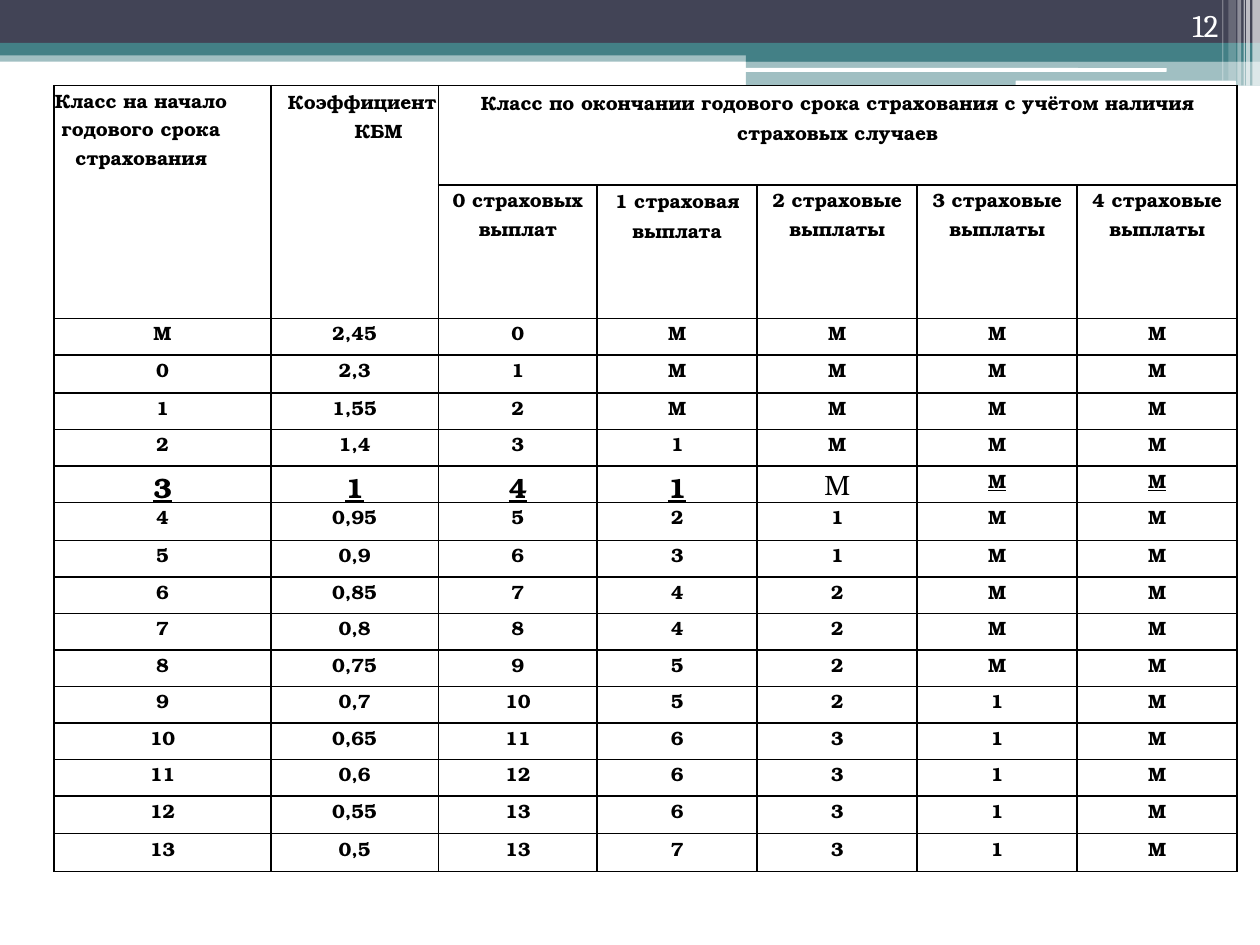
from typing import NamedTuple

from lxml.etree import SubElement
from pptx import Presentation
from pptx.dml.color import RGBColor
from pptx.enum.shapes import MSO_SHAPE
from pptx.enum.text import MSO_ANCHOR, PP_ALIGN
from pptx.oxml.ns import qn
from pptx.util import Inches, Pt

WHITE = RGBColor(0xFF, 0xFF, 0xFF)
BLACK = RGBColor(0, 0, 0)
NAVY = RGBColor(0x42, 0x44, 0x56)
TEAL = RGBColor(0x43, 0x80, 0x86)
SERIF = "TeX Gyre Bonum"
COLS = [1.72, 1.33, 1.26] + [1.27] * 4
ROWS = [0.79, 1.06, 0.29, 0.3] + [0.29] * 3 + [0.3] + [0.29] * 7 + [0.3] * 2
LEFTS = [0.64, 0.38] + [0.46] * 4 + [0.43]
BASE = {"name": SERIF, "size": Pt(11), "bold": True, "underline": False}
BIG = BASE | {"size": Pt(16), "underline": True}
PLAIN = BIG | {"bold": False, "underline": False}
LINED = BASE | {"underline": True}
MARKED = [BIG] * 4 + [PLAIN] + [LINED] * 2
MARK_ROW = 6
DATA = """М 2,45 0 М М М М
0 2,3 1 М М М М
1 1,55 2 М М М М
2 1,4 3 1 М М М
3 1 4 1 М М М
4 0,95 5 2 1 М М
5 0,9 6 3 1 М М
6 0,85 7 4 2 М М
7 0,8 8 4 2 М М
8 0,75 9 5 2 М М
9 0,7 10 5 2 1 М
10 0,65 11 6 3 1 М
11 0,6 12 6 3 1 М
12 0,55 13 6 3 1 М
13 0,5 13 7 3 1 М"""


class Bar(NamedTuple):
    """One flat bar of the top band."""
    left: float
    top: float
    width: float
    height: float
    color: RGBColor
    alpha: int = 100
    kind: MSO_SHAPE = MSO_SHAPE.RECTANGLE


class Head(NamedTuple):
    """One heading cell with its merge span and paragraph layout."""
    row: int
    col: int
    text: str
    space: float
    span: tuple[int, int] = (1, 1)
    left: float = 0
    indent: float = -1.08
    right: float = 0


ROUND = MSO_SHAPE.ROUNDED_RECTANGLE
BARS = [
    Bar(0, 0.4, 10, 0.09, TEAL, 50),
    Bar(0, 0, 10, 0.34, NAVY),
    Bar(0, 0.34, 10, 0.1, TEAL),
    Bar(5.92, 0.39, 4.08, 0.1, TEAL),
    Bar(5.92, 0.48, 4.08, 0.2, TEAL, 50),
    Bar(5.91, 0.54, 3.35, 0.03, WHITE, kind=ROUND),
    Bar(8.06, 0.64, 1.75, 0.04, WHITE, kind=ROUND),
    Bar(9.94, 0, 0.06, 0.68, WHITE, 65),
    Bar(9.89, 0, 0.03, 0.68, WHITE, 65),
    Bar(9.87, 0, 0.01, 0.68, WHITE, 60),
    Bar(9.82, 0, 0.03, 0.68, WHITE, 40),
    Bar(9.75, 0, 0.06, 0.64, WHITE, 20),
    Bar(9.7, 0, 0.01, 0.64, WHITE, 30),
]
HEADS = [
    Head(0, 0, "Класс на начало годового срока страхования", 16.3, (2, 1), right=0.34),
    Head(0, 1, "Коэффициент КБМ", 16.8, (2, 1), 0.38, -0.26),
    Head(0, 2, "Класс по окончании годового срока страхования с учётом наличия "
         "страховых случаев", 17.5, (1, 5)),
    Head(1, 2, "0 страховых выплат", 16.3),
    Head(1, 3, "1 страховая выплата", 16.8),
] + [Head(1, n + 2, f"{n} страховые выплаты", 16.3) for n in (2, 3, 4)]


def style(font, form: dict, color: RGBColor) -> None:
    """Apply format values and a colour to a font."""
    for key, value in form.items():
        setattr(font, key, value)
    font.color.rgb = color


def draw_bar(slide, bar: Bar) -> None:
    """Draw one bar."""
    shape = slide.shapes.add_shape(bar.kind, *map(Inches, bar[:4]))
    shape.shadow.inherit = False
    shape.fill.solid()
    shape.fill.fore_color.rgb = bar.color
    shape.line.fill.background()
    if bar.alpha < 100:
        tint = shape.fill._xPr.find(qn("a:solidFill"))[0]
        SubElement(tint, qn("a:alpha"), val=str(bar.alpha * 1000))


def draw_page(slide) -> None:
    """Draw the page number."""
    frame = slide.shapes.add_textbox(*map(Inches, (8.94, 0, 0.83, 0.4))).text_frame
    frame.word_wrap = True
    frame.vertical_anchor = MSO_ANCHOR.BOTTOM
    para = frame.paragraphs[0]
    para.alignment = PP_ALIGN.RIGHT
    run = para.add_run()
    run.text = "12"
    style(run.font, {"name": "Cambria", "size": Pt(18)}, WHITE)


def dress(cell) -> None:
    """Give a cell its borders, white fill and zero margins."""
    for side in ("left", "right", "top", "bottom"):
        setattr(cell, f"margin_{side}", 0)
    props = cell._tc.get_or_add_tcPr()
    for tag in ("a:lnL", "a:lnR", "a:lnT", "a:lnB"):
        line = SubElement(props, qn(tag), w=str(Pt(1)))
        fill = SubElement(line, qn("a:solidFill"))
        SubElement(fill, qn("a:srgbClr"), val=str(BLACK))
    cell.fill.solid()
    cell.fill.fore_color.rgb = WHITE


def write(cell, text: str, form: dict, left: float, indent: float = -1.08):
    """Write centred text in a cell and return its paragraph."""
    para = cell.text_frame.paragraphs[0]
    para.alignment = PP_ALIGN.CENTER
    props = para._p.get_or_add_pPr()
    props.set("marL", str(Inches(left)))
    props.set("indent", str(Inches(indent)))
    run = para.add_run()
    run.text = text
    style(run.font, form, BLACK)
    return para


def draw_head(table, head: Head) -> None:
    """Write one heading and merge its span."""
    cell = table.cell(head.row, head.col)
    high, wide = head.span
    if high * wide > 1:
        cell.merge(table.cell(head.row + high - 1, head.col + wide - 1))
    para = write(cell, head.text, BASE, head.left, head.indent)
    para.line_spacing = Pt(head.space)
    if head.right:
        para._p.get_or_add_pPr().set("marR", str(Inches(head.right)))


def draw_table(slide) -> None:
    """Draw the table of insurance classes."""
    area = map(Inches, (0.43, 0.68, sum(COLS), sum(ROWS)))
    table = slide.shapes.add_table(len(ROWS), len(COLS), *area).table
    table.first_row = table.horz_banding = False
    for col, width in zip(table.columns, COLS):
        col.width = Inches(width)
    for row, height in zip(table.rows, ROWS):
        row.height = Inches(height)
    for cell in table.iter_cells():
        dress(cell)
    for head in HEADS:
        draw_head(table, head)
    for r, line in enumerate(DATA.splitlines(), 2):
        forms = MARKED if r == MARK_ROW else [BASE] * len(COLS)
        for c, (text, form, left) in enumerate(zip(line.split(), forms, LEFTS)):
            write(table.cell(r, c), text, form, left)


def main() -> None:
    """Build and save the slide."""
    deck = Presentation()
    deck.slide_width, deck.slide_height = Inches(10), Inches(7.5)
    slide = deck.slides.add_slide(deck.slide_layouts[6])
    for bar in BARS:
        draw_bar(slide, bar)
    draw_page(slide)
    draw_table(slide)
    deck.save("out.pptx")


if __name__ == "__main__":
    main()
